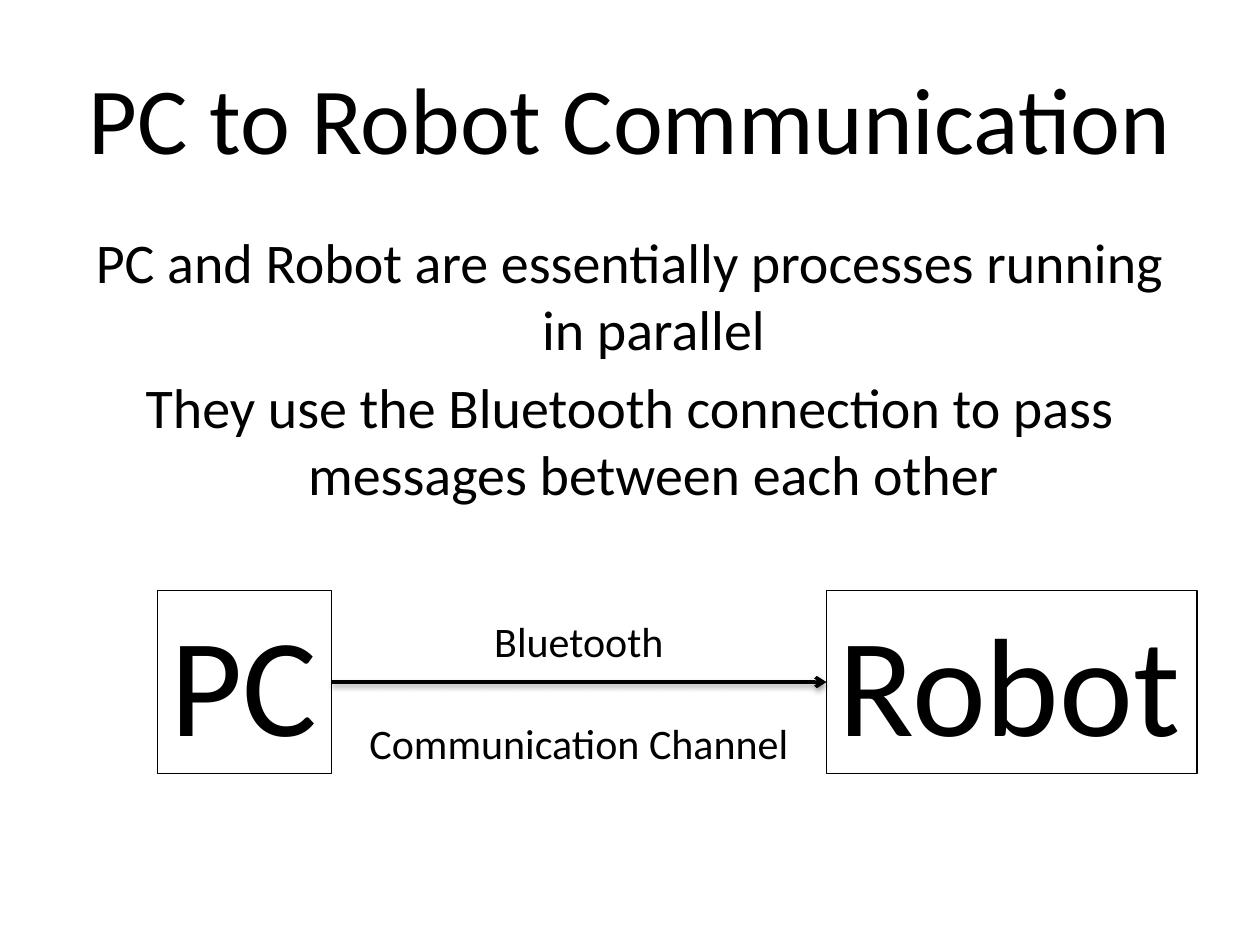
from dataclasses import dataclass

from lxml.etree import SubElement
from pptx import Presentation
from pptx.dml.color import RGBColor
from pptx.enum.shapes import MSO_CONNECTOR as Connector
from pptx.enum.text import MSO_ANCHOR as Anchor, MSO_AUTO_SIZE as AutoSize, PP_ALIGN as Align
from pptx.oxml import parse_xml
from pptx.oxml.ns import nsdecls, qn
from pptx.util import Cm, Pt


@dataclass(frozen=True)
class Theme:
    font: str = "Calibri"
    ink: RGBColor = RGBColor(0, 0, 0)
    heading: int = 54
    body: int = 32
    node: int = 80
    label: int = 24
    border: float = 0.75
    arrow: float = 2


THEME = Theme()
HEADING = "PC to Robot Communication"
POINTS = [
    "PC and Robot are essentially processes running in parallel",
    "They use the Bluetooth connection to pass messages between each other",
]
NODES = [("PC", 3.18, 3.5), ("Robot", 16.66, 7.47)]
CHANNEL = ["Bluetooth", "Communication Channel"]
NODE_TOP, NODE_HEIGHT = 11.91, 3.68
CHANNEL_TOP, CHANNEL_WIDTH, CHANNEL_HEIGHT = 12.29, 9.04, 3.33
LINE_SPACING = 1.22


def place(part, left, top, width, height):
    part.left, part.top, part.width, part.height = map(Cm, (left, top, width, height))


def write(part, lines, size, align):
    part.text_frame.text = "\n".join(lines)
    for paragraph in part.text_frame.paragraphs:
        paragraph.alignment = align
        for run in paragraph.runs:
            run.font.name = THEME.font
            run.font.size = Pt(size)
            run.font.color.rgb = THEME.ink


def add_label(slide, lines, size, align, box):
    label = slide.shapes.add_textbox(*map(Cm, box))
    write(label, lines, size, align)
    label.text_frame.word_wrap = False
    label.text_frame.auto_size = AutoSize.SHAPE_TO_FIT_TEXT
    return label


def add_link(slide, start, end, y):
    link = slide.shapes.add_connector(Connector.STRAIGHT, Cm(start), Cm(y), Cm(end), Cm(y))
    link.line.color.rgb = THEME.ink
    link.line.width = Pt(THEME.arrow)
    SubElement(link.line._get_or_add_ln(), qn("a:tailEnd"), type="arrow")
    link._element.spPr.append(parse_xml(
        f'<a:effectLst {nsdecls("a")}>'
        f'<a:outerShdw blurRad="{Pt(3.1)}" dist="{Pt(1.6)}" dir="5400000" rotWithShape="0">'
        f'<a:srgbClr val="{THEME.ink}"><a:alpha val="38000"/></a:srgbClr>'
        '</a:outerShdw></a:effectLst>'))


def main():
    deck = Presentation()
    deck.slide_width, deck.slide_height = Cm(25.4), Cm(19.05)
    slide = deck.slides.add_slide(deck.slide_layouts[1])

    heading, body = slide.placeholders
    place(heading, 1.27, 0.76, 22.86, 3.18)
    write(heading, [HEADING], THEME.heading, Align.CENTER)
    heading.text_frame.vertical_anchor = Anchor.MIDDLE

    place(body, 1.27, 4.45, 22.86, 6.48)
    write(body, POINTS, THEME.body, Align.CENTER)
    for point in body.text_frame.paragraphs:
        SubElement(point._p.get_or_add_pPr(), qn("a:buNone"))

    for name, left, width in NODES:
        node = add_label(slide, [name], THEME.node, Align.LEFT,
                         (left, NODE_TOP, width, NODE_HEIGHT))
        node.line.color.rgb = THEME.ink
        node.line.width = Pt(THEME.border)

    (_, pc_left, pc_width), (_, robot_left, _) = NODES
    pc_right = pc_left + pc_width
    add_link(slide, pc_right, robot_left, NODE_TOP + NODE_HEIGHT / 2)

    channel_left = (pc_right + robot_left - CHANNEL_WIDTH) / 2
    channel = add_label(slide, CHANNEL, THEME.label, Align.CENTER,
                        (channel_left, CHANNEL_TOP, CHANNEL_WIDTH, CHANNEL_HEIGHT))
    channel.text_frame.paragraphs[1].space_before = Pt(THEME.label * LINE_SPACING)

    deck.save("out.pptx")


if __name__ == "__main__":
    main()
